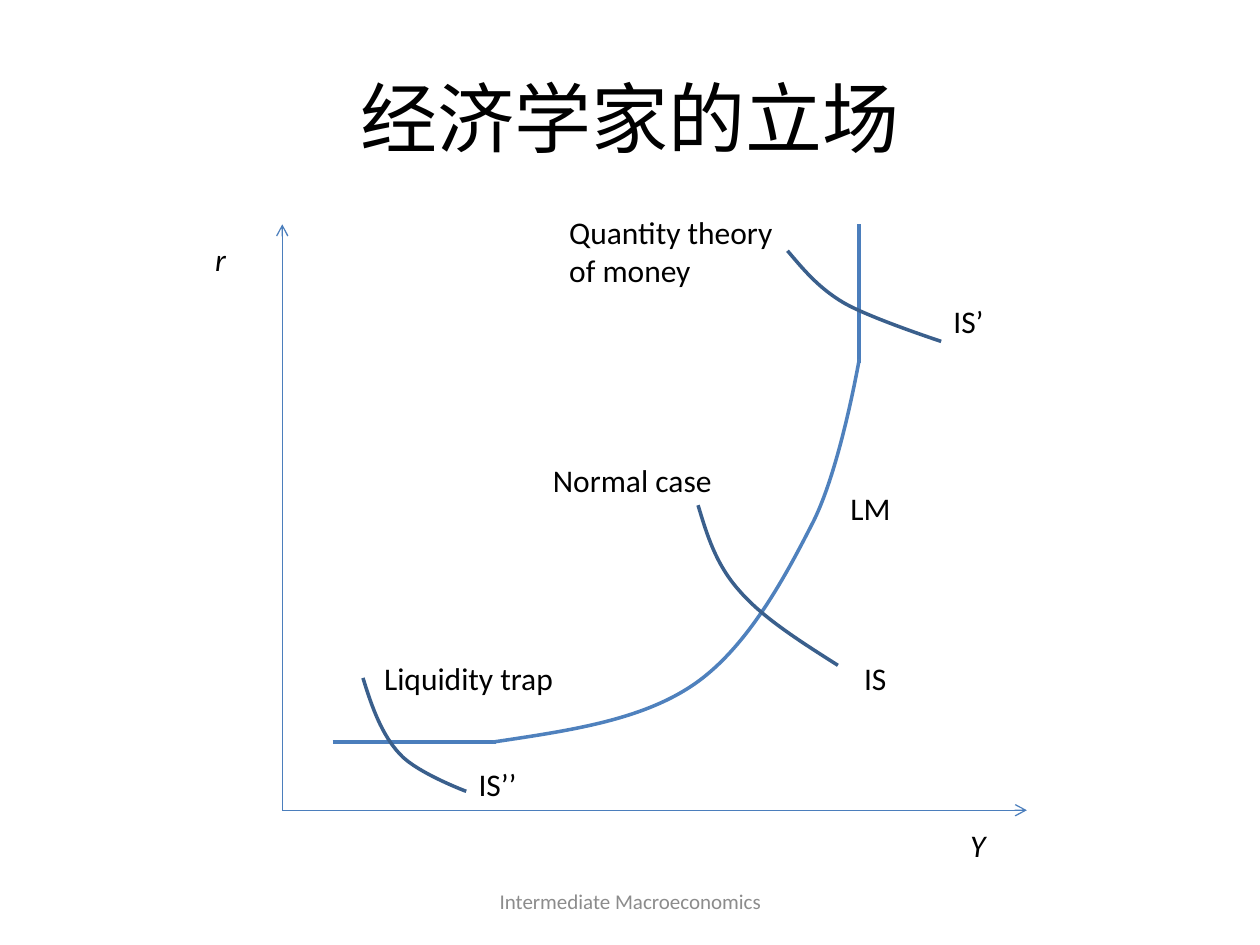
from lxml import etree
from pptx import Presentation
from pptx.dml.color import RGBColor
from pptx.enum import shapes, text
from pptx.oxml import ns
from pptx.util import Pt

BLACK = RGBColor(0x00, 0x00, 0x00)
GREY = RGBColor(0x8C, 0x8C, 0x8C)
AXIS_BLUE = RGBColor(0x4B, 0x7E, 0xBC)
LM_BLUE = RGBColor(0x4F, 0x81, 0xBD)
IS_BLUE = RGBColor(0x3A, 0x5F, 0x8C)

TITLE = ("经济学家的立场", (36, 21.6, 648, 90))
FOOTER = ("Intermediate Macroeconomics", (246.2, 500.4, 228.2, 28.8))

LABELS = [
    ("LM", (478.8, 275.8, 39.6, 28.8), False),
    ("IS’", (537.8, 169.2, 31.7, 28.8), False),
    ("IS", (486.7, 373, 31.7, 28.8), False),
    ("IS’’", (266.4, 433.4, 42.5, 28.8), False),
    ("Quantity theory of money", (318.2, 118.1, 136.1, 51.1), False),
    ("Liquidity trap", (212.4, 373, 124.6, 28.8), False),
    ("Normal case", (308.9, 259.9, 108, 28.8), False),
    ("r", (115.9, 133.9, 33.8, 28.8), True),
    ("Y", (547.2, 468.7, 39.6, 28.8), True),
]

ORIGIN = (161.3, 463)
TOP = 128.2
AXES = [(ORIGIN, (586.8, ORIGIN[1])), (ORIGIN, (ORIGIN[0], TOP))]
LM_ENDS = [((190.1, 424.1), (283.7, 424.1)), ((491, TOP), (491, 207.4))]

CURVES = [
    (LM_BLUE, [(281.5, 424.1), (324.8, 417.6), (366.5, 411.8), (396.7, 391),
               (427, 370.1), (448.6, 329.8), (464.4, 298.8),
               (480.2, 267.8), (491, 205.2), (491, 205.2)]),
    (IS_BLUE, [(450, 143.3), (458.6, 153.4), (467.3, 164.2), (481.7, 172.8),
               (496.1, 181.4), (537.8, 195.1), (537.8, 195.1)]),
    (IS_BLUE, [(398.9, 288.7), (403.9, 305.3), (409, 322.6), (422.6, 337.7),
               (435.6, 352.8), (457.2, 366.5), (478.8, 380.2)]),
    (IS_BLUE, [(207.4, 387.4), (212.4, 403.9), (218.2, 419.8), (228.2, 430.6),
               (237.6, 441.4), (266.4, 452.2), (266.4, 452.2)]),
]


def add_text(slide, wording, box, size=18, color=BLACK, italic=False,
             align=text.PP_ALIGN.LEFT, anchor=text.MSO_ANCHOR.TOP, right=7.2):
    frame = slide.shapes.add_textbox(*map(Pt, box)).text_frame
    frame.word_wrap = True
    frame.vertical_anchor = anchor
    frame.margin_right = Pt(right)
    paragraph = frame.paragraphs[0]
    paragraph.alignment = align
    run = paragraph.add_run()
    run.text = wording
    run.font.name = "Calibri"
    run.font.size = Pt(size)
    run.font.italic = italic
    run.font.color.rgb = color


def add_line(slide, start, end, width, arrow=False):
    line = slide.shapes.add_connector(
        shapes.MSO_CONNECTOR.STRAIGHT, *map(Pt, start + end))
    line.line.color.rgb = AXIS_BLUE
    line.line.width = Pt(width)
    if arrow:
        etree.SubElement(line.line._get_or_add_ln(), ns.qn("a:tailEnd"), type="arrow")
    etree.SubElement(line._element.spPr, ns.qn("a:effectLst"))


def add_curve(slide, points, color):
    start, *rest = [(Pt(x), Pt(y)) for x, y in points]
    builder = slide.shapes.build_freeform(*start)
    builder.add_line_segments(rest, close=False)
    curve = builder.convert_to_shape()
    curve.shadow.inherit = False
    curve.fill.background()
    curve.line.color.rgb = color
    curve.line.width = Pt(2)
    segments = list(curve._element.iter(ns.qn("a:lnTo")))
    for first in range(0, len(segments), 3):
        bezier = etree.Element(ns.qn("a:cubicBezTo"))
        segments[first].addprevious(bezier)
        for segment in segments[first:first + 3]:
            bezier.append(segment[0])
            segment.getparent().remove(segment)


def main():
    deck = Presentation()
    deck.slide_width, deck.slide_height = Pt(720), Pt(540)
    slide = deck.slides.add_slide(deck.slide_layouts[6])
    centred = {"align": text.PP_ALIGN.CENTER, "anchor": text.MSO_ANCHOR.MIDDLE}
    add_text(slide, *TITLE, size=44, **centred)
    add_text(slide, *FOOTER, size=12, color=GREY, **centred)
    for start, end in AXES:
        add_line(slide, start, end, 0.75, arrow=True)
    for start, end in LM_ENDS:
        add_line(slide, start, end, 2)
    for color, points in CURVES:
        add_curve(slide, points, color)
    for wording, box, italic in LABELS:
        add_text(slide, wording, box, italic=italic, right=0)
    deck.save("out.pptx")


if __name__ == "__main__":
    main()
